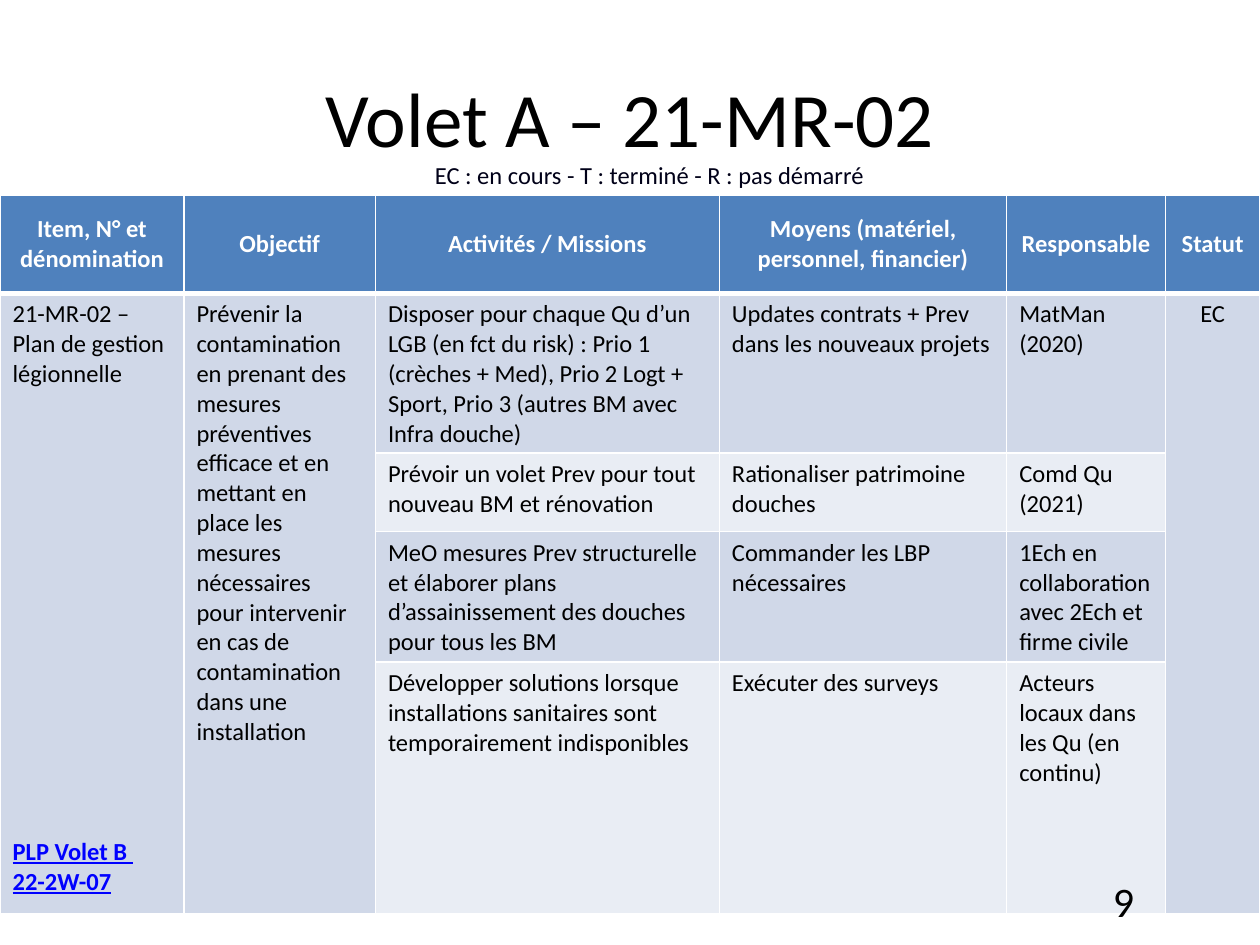
from copy import deepcopy
from dataclasses import dataclass

from lxml.etree import SubElement
from pptx import Presentation
from pptx.dml.color import RGBColor as RGB
from pptx.enum.text import MSO_ANCHOR as ANCHOR, PP_ALIGN as ALIGN
from pptx.oxml.ns import qn
from pptx.util import Pt


@dataclass(frozen=True)
class Theme:
    """Colours, font and type sizes of the slide."""
    font: str = "Calibri"
    ink: str = "000000"
    legend: str = "000018"
    link: str = "0000FF"
    rule: str = "FFFFFF"
    header: str = "4F81BD"
    band_dark: str = "D0D8E8"
    band_light: str = "E9EDF4"
    title_size: int = 44
    number_size: int = 24
    body_size: int = 14


THEME = Theme()
COLUMN_WIDTHS = (105.12, 109.44, 196.56, 164.16, 90.72, 54)
ROW_HEIGHTS = (56, 63, 45, 73, 144)
SPANNED_COLUMNS = (0, 1, 5)
LINK_GAP = 256
HEADINGS = ("Item, N° et dénomination", "Objectif", "Activités / Missions",
            "Moyens (matériel, personnel, financier)", "Responsable", "Statut")
ITEM = "21-MR-02 – Plan de gestion légionnelle"
ITEM_LINK = "PLP Volet B \v22-2W-07"
OBJECTIVE = ("Prévenir la contamination en prenant des mesures préventives efficace "
             "et en mettant en place les mesures nécessaires pour intervenir en cas "
             "de contamination dans une installation")
MISSIONS = (
    ("Disposer pour chaque Qu d’un LGB (en fct du risk) : Prio 1 (crèches + Med), "
     "Prio 2 Logt + Sport, Prio 3 (autres BM avec Infra douche)",
     "Updates contrats + Prev dans les nouveaux projets", "MatMan (2020)"),
    ("Prévoir un volet Prev pour tout nouveau BM et rénovation",
     "Rationaliser patrimoine douches", "Comd Qu (2021)"),
    ("MeO mesures Prev structurelle et élaborer plans d’assainissement des douches "
     "pour tous les BM",
     "Commander les LBP nécessaires",
     "1Ech en collaboration avec 2Ech et firme civile"),
    ("Développer solutions lorsque installations sanitaires sont temporairement "
     "indisponibles",
     "Exécuter des surveys", "Acteurs locaux dans les Qu (en continu)"),
)


def write(paragraph, text, size=THEME.body_size, color=THEME.ink, align=ALIGN.LEFT, **extra):
    """Fill a paragraph and format its runs and line breaks."""
    paragraph.text = text
    paragraph.alignment = align
    formats = {"name": THEME.font, "size": Pt(size), "bold": False, **extra}
    for run in paragraph.runs:
        for attribute, value in formats.items():
            setattr(run.font, attribute, value)
        run.font.color.rgb = RGB.from_string(color)
    for line_break in paragraph._p.findall(qn("a:br")):
        line_break.append(deepcopy(paragraph.runs[0]._r.rPr))


def add_label(slide, box, text, anchor, **formats):
    """Place one line of text in a box."""
    frame = slide.shapes.add_textbox(*map(Pt, box)).text_frame
    frame.word_wrap = True
    frame.vertical_anchor = anchor
    write(frame.paragraphs[0], text, **formats)


def style_cell(cell, fill, top=1, bottom=1):
    """Give a cell its white borders and its fill."""
    properties = cell._tc.get_or_add_tcPr()
    for side, width in {"L": 1, "R": 1, "T": top, "B": bottom}.items():
        line = SubElement(properties, qn(f"a:ln{side}"), w=str(Pt(width)))
        solid = SubElement(line, qn("a:solidFill"))
        SubElement(solid, qn("a:srgbClr"), val=THEME.rule)
    cell.fill.solid()
    cell.fill.fore_color.rgb = RGB.from_string(fill)


def add_plan_table(slide, box):
    """Build the action plan table in a box."""
    rows, columns = len(ROW_HEIGHTS), len(COLUMN_WIDTHS)
    plan = slide.shapes.add_table(rows, columns, *map(Pt, box)).table
    for column, width in zip(plan.columns, COLUMN_WIDTHS):
        column.width = Pt(width)
    for row, height in zip(plan.rows, ROW_HEIGHTS):
        row.height = Pt(height)

    for index, heading in enumerate(HEADINGS):
        cell = plan.cell(0, index)
        style_cell(cell, THEME.header, bottom=3)
        cell.vertical_anchor = ANCHOR.MIDDLE
        write(cell.text_frame.paragraphs[0], heading, color=THEME.rule,
              align=ALIGN.CENTER, bold=True)

    for row in range(1, rows):
        band = THEME.band_dark if row % 2 else THEME.band_light
        for column in range(columns):
            fill = THEME.band_dark if column in SPANNED_COLUMNS else band
            style_cell(plan.cell(row, column), fill, top=3 if row == 1 else 1)
    for column in SPANNED_COLUMNS:
        plan.cell(1, column).merge(plan.cell(rows - 1, column))

    for row, mission in enumerate(MISSIONS, 1):
        for column, text in enumerate(mission, 2):
            write(plan.cell(row, column).text_frame.paragraphs[0], text)

    item, objective, status = (plan.cell(1, c).text_frame for c in SPANNED_COLUMNS)
    write(item.paragraphs[0], ITEM)
    item_link = item.add_paragraph()
    write(item_link, ITEM_LINK, color=THEME.link, bold=True, underline=True)
    item_link.space_before = Pt(LINK_GAP)
    write(objective.paragraphs[0], OBJECTIVE)
    write(status.paragraphs[0], "EC", align=ALIGN.CENTER)


def main():
    """Assemble and save the slide."""
    deck = Presentation()
    deck.slide_width, deck.slide_height = Pt(720), Pt(540)
    slide = deck.slides.add_slide(deck.slide_layouts[6])
    add_label(slide, (36, 21.6, 648, 90), "Volet A – 21-MR-02", ANCHOR.MIDDLE,
              size=THEME.title_size, align=ALIGN.CENTER)
    add_plan_table(slide, (0, 111.6, 720, sum(ROW_HEIGHTS)))
    add_label(slide, (516.24, 500.4, 138.96, 28.8), "9", ANCHOR.MIDDLE,
              size=THEME.number_size, align=ALIGN.RIGHT)
    add_label(slide, (172.8, 84.24, 396.72, 27.36),
              "EC : en cours - T : terminé - R : pas démarré", ANCHOR.BOTTOM,
              color=THEME.legend, align=ALIGN.CENTER)
    deck.save("out.pptx")


if __name__ == "__main__":
    main()
